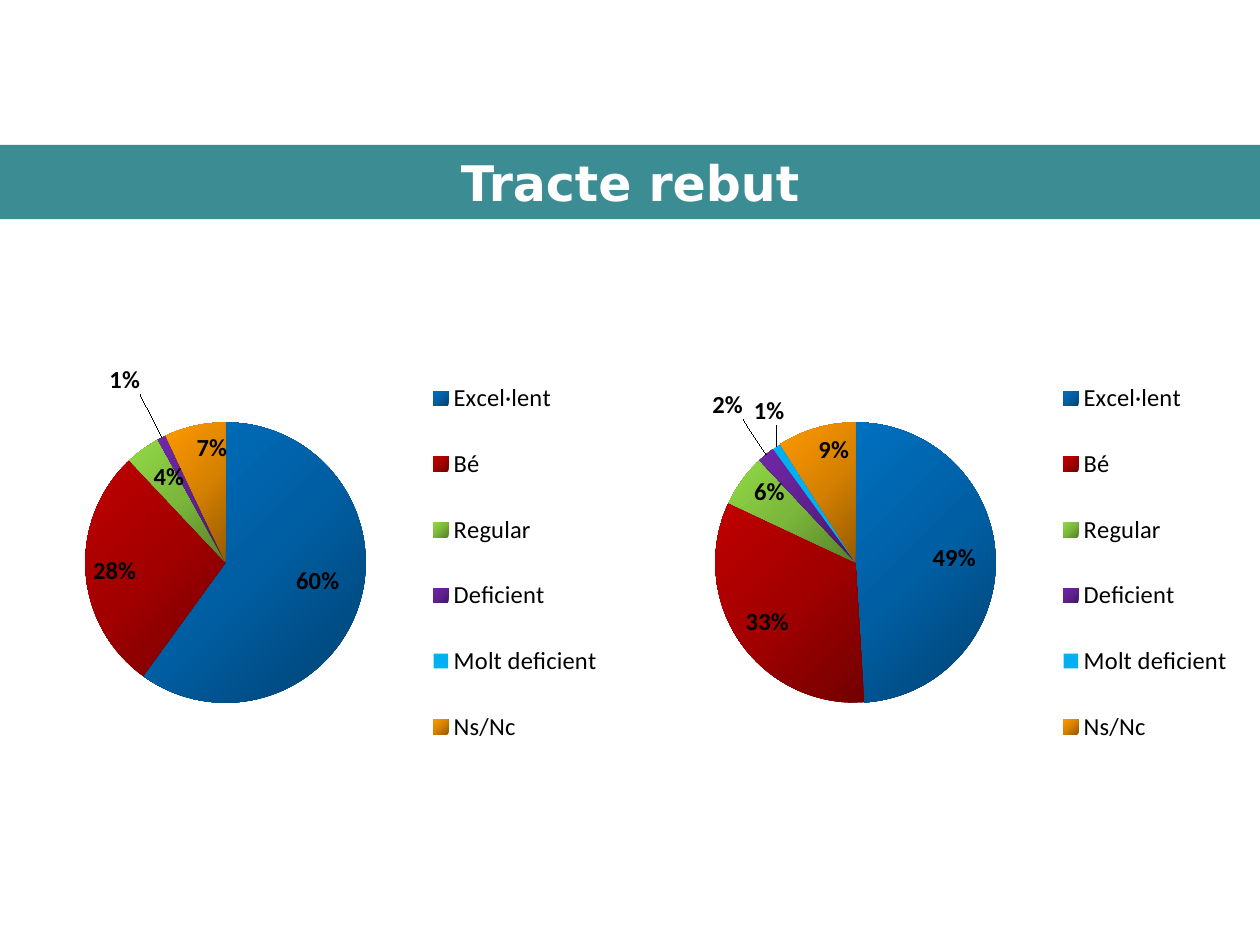
import copy

import pptx
import pptx.chart.data
import pptx.dml.color
import pptx.enum.chart
import pptx.enum.text
import pptx.oxml
import pptx.oxml.ns
from pptx.util import Cm

LabelPosition = pptx.enum.chart.XL_LABEL_POSITION

# Each answer with its fill: dark, middle and light shades, or one plain colour
ANSWERS = {
    "Excel·lent": ("004272", "005EA2", "0070C0"),
    "Bé": ("720000", "A20000", "C00000"),
    "Regular": ("57812A", "7BB73B", "92DA46"),
    "Deficient": ("431764", "5F218E", "7128A8"),
    "Molt deficient": ("00B0F0",),
    "Ns/Nc": ("975B00", "D78100", "FF9900"),
}
INSIDE, OUTSIDE = LabelPosition.INSIDE_END, LabelPosition.OUTSIDE_END
# Labels moved from their usual place: answer index -> (position, dx, dy)
LEFT_LABELS = {0: (INSIDE, -0.02, -0.01), 2: (INSIDE, 0.01, 0.01),
               3: (OUTSIDE, -0.03, -0.05), 4: (OUTSIDE, 0.05, -0.05)}
RIGHT_LABELS = {0: (INSIDE, -0.02, 0), 2: (INSIDE, 0.01, -0.01),
                3: (OUTSIDE, -0.03, -0.04), 4: (OUTSIDE, 0.02, -0.02)}


def rgb(colour):
    return pptx.dml.color.RGBColor.from_string(colour)


def style_font(font, name, size, colour, bold=False):
    font.name = name
    font.size = pptx.util.Pt(size)
    font.bold = bold
    font.color.rgb = rgb(colour)


def set_layout(parent, index, **settings):
    """Give a chart part a manual layout, as fractions of the chart."""
    for old in parent.findall(pptx.oxml.ns.qn("c:layout")):
        parent.remove(old)
    items = "".join(f'<c:{key} val="{value}"/>' for key, value in settings.items())
    parent.insert(index, pptx.oxml.parse_xml(
        f'<c:layout {pptx.oxml.ns.nsdecls("c")}><c:manualLayout>{items}'
        '</c:manualLayout></c:layout>'))


def fill_slices(chart):
    points = chart.plots[0].series[0].points
    fills = [points[i].format.fill for i in range(len(ANSWERS))]
    for fill, shades in zip(fills, ANSWERS.values()):
        if len(shades) == 1:
            fill.solid()
            fill.fore_color.rgb = rgb(shades[0])
        else:
            fill.gradient()
            fill.gradient_angle = 135
    for stops in chart.element.xpath(".//c:dPt//a:gsLst"):
        stops.insert(1, copy.deepcopy(stops[0]))
    for fill, shades in zip(fills, ANSWERS.values()):
        if len(shades) > 1:
            for stop, shade, place in zip(fill.gradient_stops, shades, (0, 0.5, 1)):
                stop.color.rgb = rgb(shade)
                stop.position = place


def label_slices(chart, moved_labels):
    series = chart.plots[0].series[0]
    labels = series.data_labels
    labels.show_percentage = True
    labels.show_value = False
    labels.position = INSIDE
    style_font(labels.font, "Calibri", 14, "000000", bold=True)
    for index, (position, _, _) in moved_labels.items():
        label = series.points[index].data_label
        style_font(label.font, "Calibri", 14, "000000", bold=True)
        label.position = position
    for label, (_, dx, dy) in zip(chart.element.xpath(".//c:dLbl"),
                                  moved_labels.values()):
        set_layout(label, 1, x=dx, y=dy)
        for tag, shown in (("c:showVal", "0"), ("c:showPercent", "1")):
            label.find(pptx.oxml.ns.qn(tag)).set("val", shown)
    for leader in chart.element.xpath(".//c:ser/c:dLbls/c:showLeaderLines"):
        leader.set("val", "1")


def add_pie(slide, left, top, width, height, values, moved_labels):
    data = pptx.chart.data.CategoryChartData()
    data.categories = list(ANSWERS)
    data.add_series("Series 1", values)
    chart = slide.shapes.add_chart(pptx.enum.chart.XL_CHART_TYPE.PIE,
                                   left, top, width, height, data).chart
    chart.has_title = False
    style_font(chart.font, "Arial", 18, "000000")
    chart.plots[0].vary_by_categories = True
    fill_slices(chart)
    label_slices(chart, moved_labels)
    chart.has_legend = True
    chart.legend.position = pptx.enum.chart.XL_LEGEND_POSITION.RIGHT
    chart.legend.include_in_layout = False
    style_font(chart.legend.font, "Calibri", 14, "000000")
    set_layout(chart.element.xpath(".//c:plotArea")[0], 0, layoutTarget="inner",
               xMode="edge", yMode="edge", x=0.14, y=0.08, w=0.46, h=0.79)
    set_layout(chart.element.xpath(".//c:legend")[0], 1,
               xMode="edge", yMode="edge", x=0.7, y=0.18, w=0.29, h=0.59)


def place_title(title, left, top, width, height):
    title.left, title.top, title.width, title.height = left, top, width, height
    title.fill.solid()
    title.fill.fore_color.rgb = rgb("3C8C93")
    title.text_frame.text = "Tracte rebut"
    title.text_frame.vertical_anchor = pptx.enum.text.MSO_ANCHOR.MIDDLE
    paragraph = title.text_frame.paragraphs[0]
    paragraph.alignment = pptx.enum.text.PP_ALIGN.CENTER
    style_font(paragraph.runs[0].font, "DejaVu Sans", 28, "FFFFFF", bold=True)


def main():
    deck = pptx.Presentation()
    deck.slide_width, deck.slide_height = Cm(25.4), Cm(19.05)
    slide = deck.slides.add_slide(deck.slide_layouts[5])
    place_title(slide.shapes.title, 0, Cm(2.92), deck.slide_width, Cm(1.5))
    pies = ((Cm(12.7), (49, 33, 6, 2, 1, 9), RIGHT_LABELS),
            (0, (60, 28, 4, 1, 0, 7), LEFT_LABELS))
    for left, values, moved_labels in pies:
        add_pie(slide, left, Cm(4.37), Cm(12.29), Cm(14.68), values, moved_labels)
    deck.save("out.pptx")


if __name__ == "__main__":
    main()
